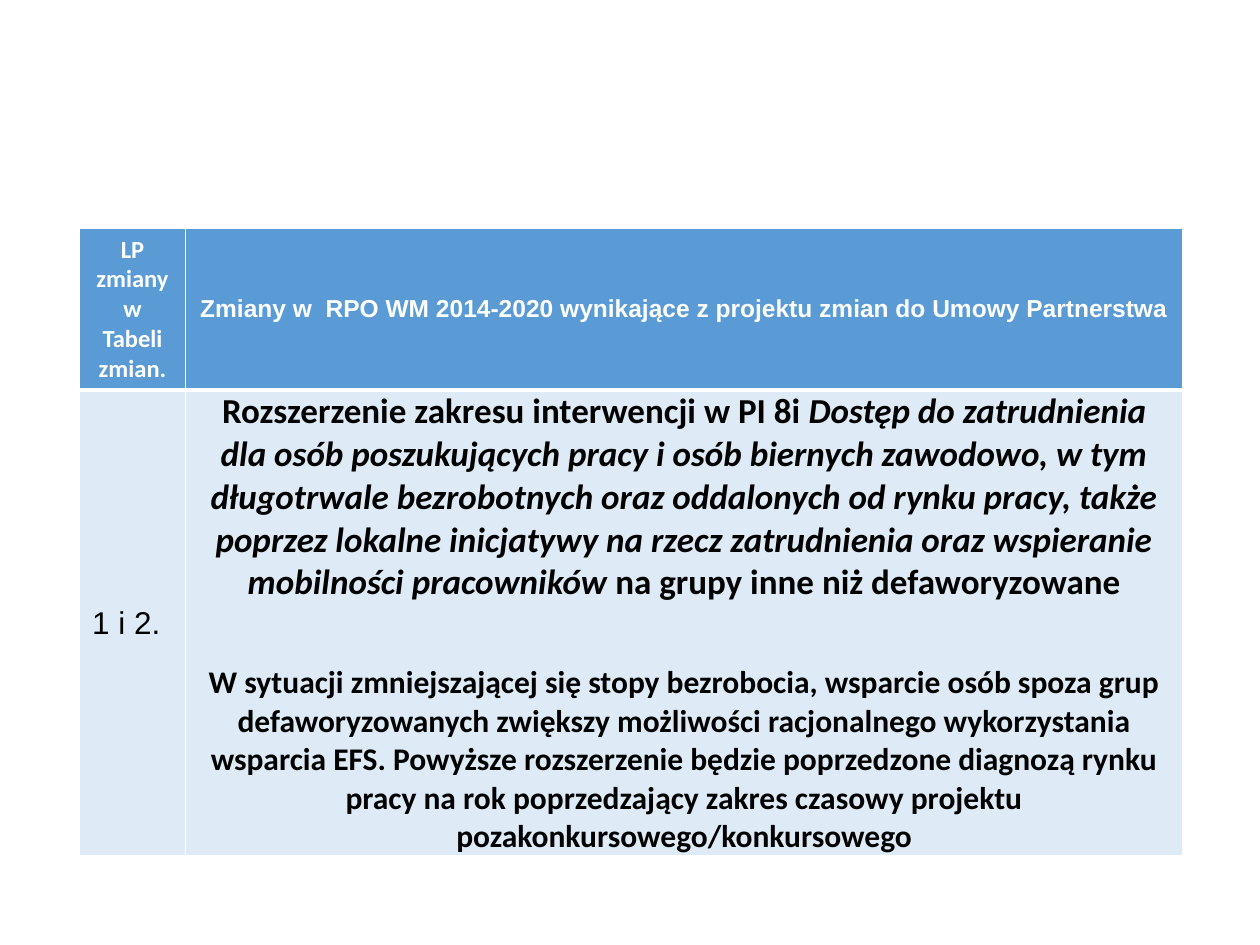
from dataclasses import dataclass

from lxml.etree import SubElement
from pptx import Presentation
from pptx.dml.color import RGBColor
from pptx.enum.text import MSO_ANCHOR, PP_ALIGN
from pptx.oxml.ns import qn
from pptx.util import Pt


@dataclass(frozen=True)
class Theme:
    header_fill: str = "5B9BD5"
    body_fill: str = "DEEBF7"
    border: str = "FFFFFF"
    header_text: str = "FFFFFF"
    body_text: str = "000000"
    serial_font: str = "Arial"
    text_font: str = "Calibri"
    header_size: int = 14
    body_size: int = 18
    lead_size: int = 20


THEME = Theme()
BLANK_LAYOUT = 6


def add_run(paragraph, text, font, size, color, bold=True, italic=False):
    run = paragraph.add_run()
    run.text = text
    run.font.name = font
    run.font.size = Pt(size)
    run.font.bold = bold
    run.font.italic = italic
    run.font.color.rgb = RGBColor.from_string(color)


def style_cell(cell, fill, bottom_width=1):
    """Borders come before the fill in the cell properties."""
    cell.vertical_anchor = MSO_ANCHOR.MIDDLE
    properties = cell._tc.get_or_add_tcPr()
    for side, width in (("L", 1), ("R", 1), ("T", 1), ("B", bottom_width)):
        line = SubElement(properties, qn(f"a:ln{side}"), w=str(Pt(width)))
        SubElement(SubElement(line, qn("a:solidFill")), qn("a:srgbClr"), val=THEME.border)
    cell.fill.solid()
    cell.fill.fore_color.rgb = RGBColor.from_string(fill)


def add_changes_table(slide):
    column_widths, row_heights = (60.5, 570), (91.5, 265.5)
    frame = slide.shapes.add_table(
        2, 2, Pt(45.5), Pt(130.5), Pt(sum(column_widths)), Pt(sum(row_heights)))
    table = frame.table
    for column, width in zip(table.columns, column_widths):
        column.width = Pt(width)
    for row, height in zip(table.rows, row_heights):
        row.height = Pt(height)
    return table


def fill_header(table):
    headings = (
        ("LP zmiany w Tabeli zmian.", THEME.text_font),
        ("Zmiany w  RPO WM 2014-2020 wynikające z projektu zmian do Umowy Partnerstwa",
         THEME.serial_font),
    )
    for column, (heading, font) in enumerate(headings):
        cell = table.cell(0, column)
        style_cell(cell, THEME.header_fill, bottom_width=3)
        paragraph = cell.text_frame.paragraphs[0]
        paragraph.alignment = PP_ALIGN.CENTER
        add_run(paragraph, heading, font, THEME.header_size, THEME.header_text)


def fill_change(table):
    # Number of the change
    number = table.cell(1, 0)
    style_cell(number, THEME.body_fill)
    add_run(number.text_frame.paragraphs[0], "1 i 2.", THEME.serial_font,
            THEME.body_size, THEME.body_text, bold=False)

    # Scope of the change
    description = table.cell(1, 1)
    style_cell(description, THEME.body_fill)
    description.margin_top = description.margin_bottom = 0
    scope = description.text_frame.paragraphs[0]
    scope.alignment = PP_ALIGN.CENTER
    scope.space_after = Pt(34)
    scope_parts = (
        ("Rozszerzenie zakresu interwencji w PI 8i ", False),
        ("Dostęp do zatrudnienia dla osób poszukujących pracy i osób biernych zawodowo, "
         "w tym długotrwale bezrobotnych oraz oddalonych od rynku pracy, także poprzez "
         "lokalne inicjatywy na rzecz zatrudnienia oraz wspieranie mobilności "
         "pracowników ", True),
        ("na grupy inne niż defaworyzowane", False),
    )
    for text, italic in scope_parts:
        add_run(scope, text, THEME.text_font, THEME.lead_size, THEME.body_text, italic=italic)

    # Reason for the change
    reason = description.text_frame.add_paragraph()
    reason.alignment = PP_ALIGN.CENTER
    add_run(reason,
            "W sytuacji zmniejszającej się stopy bezrobocia, wsparcie osób spoza grup "
            "defaworyzowanych zwiększy możliwości racjonalnego wykorzystania wsparcia EFS. "
            "Powyższe rozszerzenie będzie poprzedzone diagnozą rynku pracy na rok "
            "poprzedzający zakres czasowy projektu pozakonkursowego/konkursowego",
            THEME.text_font, THEME.body_size, THEME.body_text)


def main():
    presentation = Presentation()
    presentation.slide_width, presentation.slide_height = Pt(720), Pt(540)
    slide = presentation.slides.add_slide(presentation.slide_layouts[BLANK_LAYOUT])
    table = add_changes_table(slide)
    fill_header(table)
    fill_change(table)
    presentation.save("out.pptx")


if __name__ == "__main__":
    main()
